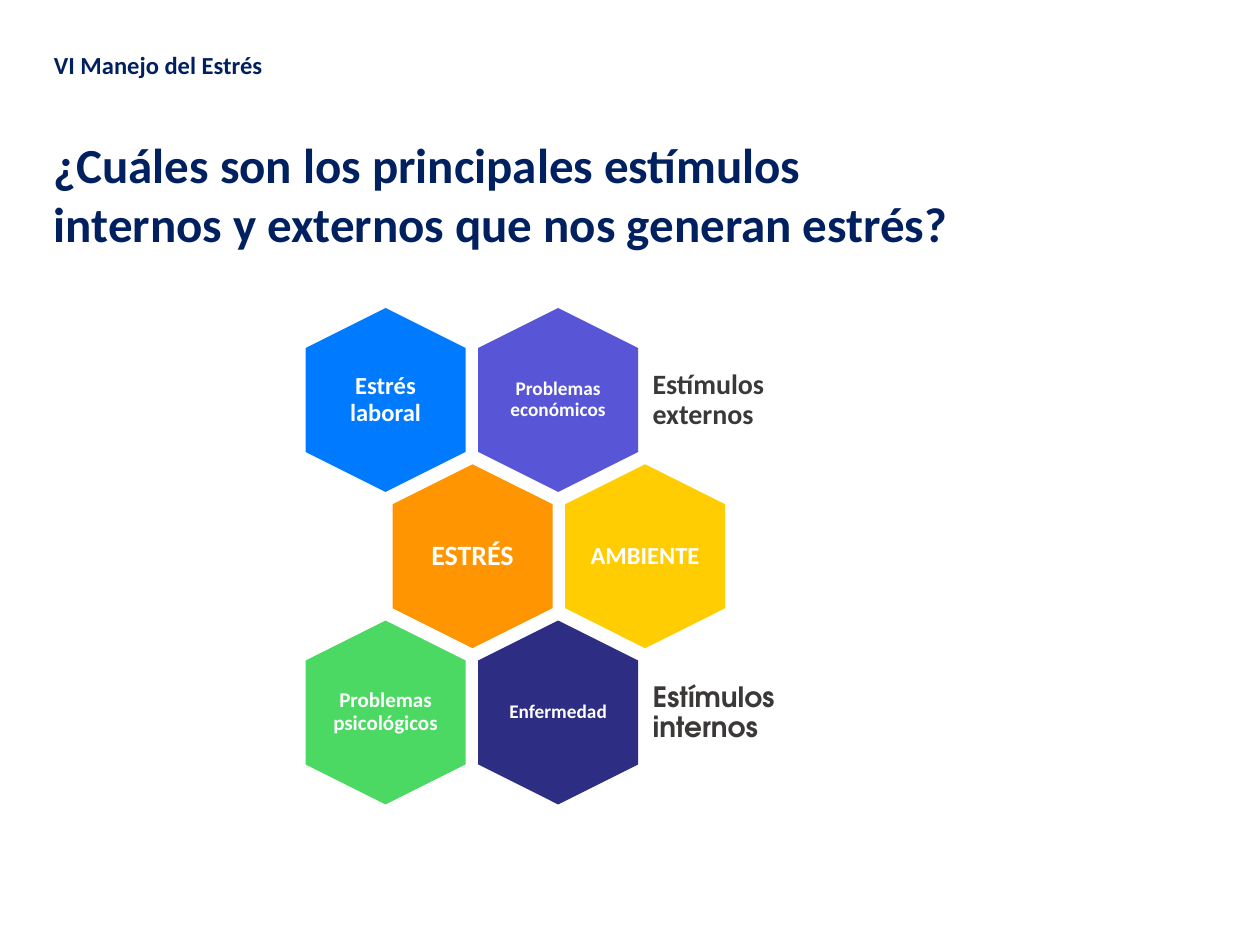
import pptx
import pptx.dml.color
import pptx.enum.shapes
import pptx.enum.text
import pptx.util

Inches = pptx.util.Inches
Align = pptx.enum.text.PP_ALIGN
Anchor = pptx.enum.text.MSO_ANCHOR

NAVY, WHITE, GREY = "002060", "FFFFFF", "3B3838"
HEX_LENGTH, HEX_WIDTH = Inches(1.46), Inches(1.27)
COLUMN_STEP, ROW_STEP = Inches(1.37), Inches(1.24)
LABEL_WIDTH, LABEL_HEIGHT = Inches(0.87), Inches(1)

ROWS = [
    (Inches(0),
     [("Estrés laboral", "007AFF", 14, 0), ("Problemas económicos", "5855D7", 11, 0.04)],
     ("Estímulos externos", "Calibri")),
    (Inches(0.69),
     [("ESTRÉS", "FF9500", 16, 0.07), ("AMBIENTE", "FFCD01", 14, 0)],
     None),
    (Inches(0),
     [("Problemas psicológicos", "4CD963", 12, 0), ("Enfermedad", "2D2E83", 11, 0.04)],
     ("Estímulos internos", "TeX Gyre Adventor")),
]


def rgb(value):
    """Return the colour for a hex string."""
    return pptx.dml.color.RGBColor.from_string(value)


def add_text(slide, text, left, top, width, height, size, color, font="Calibri",
             align=Align.LEFT, anchor=Anchor.MIDDLE, inset=(0.07, 0.07), line_spacing=0.9):
    """Add a wrapped bold text box and return its frame."""
    frame = slide.shapes.add_textbox(left, top, width, height).text_frame
    frame.word_wrap = True
    frame.vertical_anchor = anchor
    frame.margin_left = frame.margin_right = Inches(inset[0])
    frame.margin_top = frame.margin_bottom = Inches(inset[1])
    paragraph = frame.paragraphs[0]
    paragraph.alignment = align
    paragraph.line_spacing = line_spacing
    run = paragraph.add_run()
    run.text = text
    run.font.name = font
    run.font.size = pptx.util.Pt(size)
    run.font.bold = True
    run.font.color.rgb = rgb(color)
    return frame


def add_heading(slide, left, top, width):
    """Add the section name and the question below it."""
    lines = [
        ("VI Manejo del Estrés", Inches(0), Inches(4.94), Inches(0.34), 14),
        ("¿Cuáles son los principales estímulos internos y externos que nos generan estrés?",
         Inches(0.67), width, Inches(1.04), 28),
    ]
    for text, offset, line_width, height, size in lines:
        frame = add_text(slide, text, left, top + offset, line_width, height, size, NAVY,
                         anchor=Anchor.TOP, inset=(0.1, 0.05), line_spacing=1)
        frame.auto_size = pptx.enum.text.MSO_AUTO_SIZE.SHAPE_TO_FIT_TEXT


def add_cell(slide, left, top, label, fill, size, inset):
    """Add an upright hexagon with its label centred on it."""
    hexagon = slide.shapes.add_shape(pptx.enum.shapes.MSO_SHAPE.HEXAGON,
                                     left, top, HEX_LENGTH, HEX_WIDTH)
    hexagon.rotation = 90
    hexagon.shadow.inherit = False
    hexagon.fill.solid()
    hexagon.fill.fore_color.rgb = rgb(fill)
    hexagon.line.fill.background()
    add_text(slide, label, left + (HEX_LENGTH - LABEL_WIDTH) // 2,
             top + (HEX_WIDTH - LABEL_HEIGHT) // 2, LABEL_WIDTH, LABEL_HEIGHT,
             size, WHITE, align=Align.CENTER, inset=(inset, inset))


def add_honeycomb(slide, left, top):
    """Add the rows of hexagons and the captions to their right."""
    for row, (indent, cells, caption) in enumerate(ROWS):
        row_top = top + row * ROW_STEP
        for column, cell in enumerate(cells):
            add_cell(slide, left + indent + column * COLUMN_STEP, row_top, *cell)
        if caption:
            text, font = caption
            add_text(slide, text, left + Inches(2.78), row_top + Inches(0.2),
                     Inches(1.63), Inches(0.88), 16, GREY, font=font)


def main():
    """Build and save the slide."""
    deck = pptx.Presentation()
    deck.slide_width, deck.slide_height = Inches(10), Inches(7.5)
    slide = deck.slides.add_slide(deck.slide_layouts[6])
    add_honeycomb(slide, Inches(2.33), Inches(2.54))
    add_heading(slide, Inches(0.33), Inches(0.35), Inches(7.46))
    deck.save("out.pptx")


if __name__ == "__main__":
    main()
